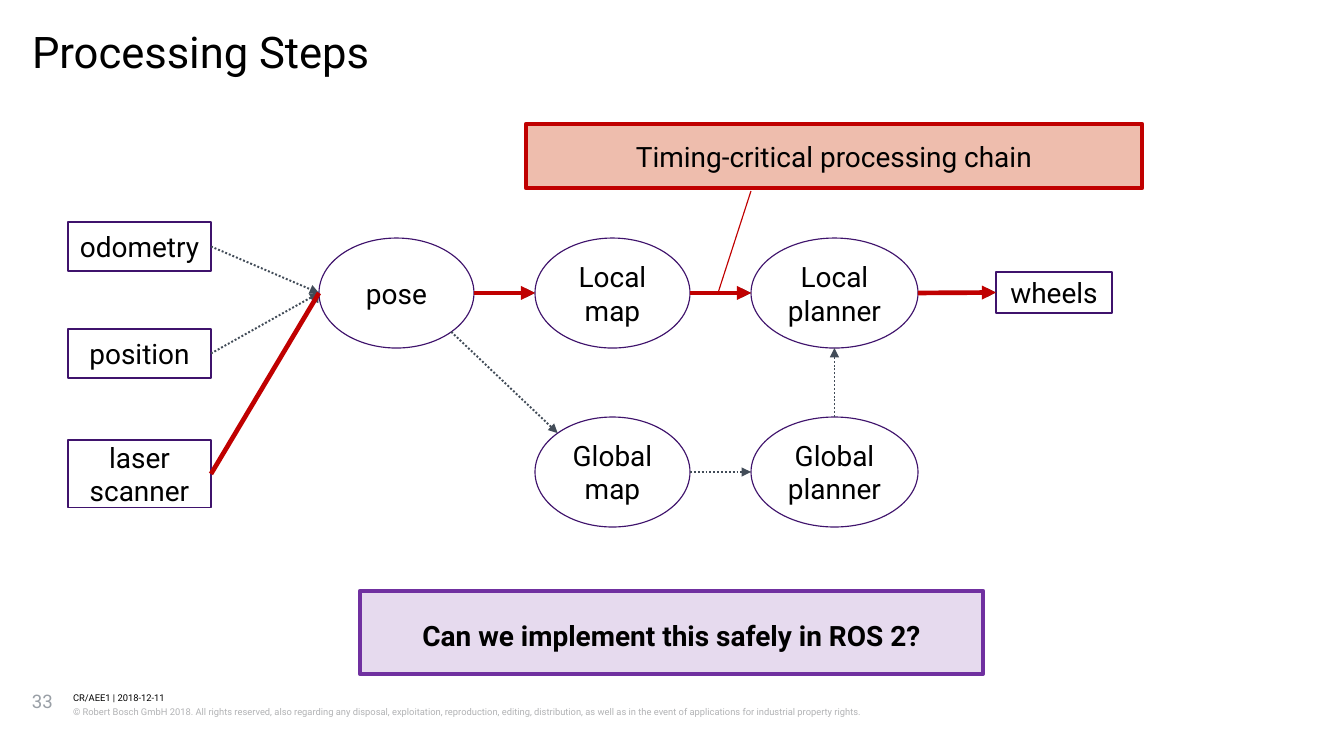
from math import sqrt

from lxml.etree import SubElement
from pptx import Presentation
from pptx.dml.color import RGBColor
from pptx.enum.dml import MSO_LINE
from pptx.enum.shapes import MSO_CONNECTOR, MSO_SHAPE
from pptx.enum.text import MSO_ANCHOR, MSO_AUTO_SIZE, PP_ALIGN
from pptx.oxml.ns import qn
from pptx.util import Emu, Pt

FONT = "Roboto"
COLORS = {
    "text": "000000", "outline": "3F136C", "flow": "424C58", "critical": "C00000",
    "callout": "CC3300", "question": "E6DAEE", "question_line": "7030A0",
    "number": "999FA6", "legal": "B2B3B5",
}
DIAGONAL = sqrt(0.5) / 2
SIDES = {
    "left": (0, 0.5), "right": (1, 0.5), "top": (0.5, 0), "bottom": (0.5, 1),
    "upper left": (0.5 - DIAGONAL, 0.5 - DIAGONAL),
    "lower right": (0.5 + DIAGONAL, 0.5 + DIAGONAL),
}
# name: (text, shape, (left, top, width, height))
NODES = {
    "odometry": ("odometry", MSO_SHAPE.RECTANGLE, (0, 0, 143, 49)),
    "position": ("position", MSO_SHAPE.RECTANGLE, (0, 107, 143, 49)),
    "laser": ("laser\nscanner", MSO_SHAPE.RECTANGLE, (0, 218, 143, 68)),
    "pose": ("pose", MSO_SHAPE.OVAL, (251, 16, 155, 110)),
    "local map": ("Local\nmap", MSO_SHAPE.OVAL, (467, 16, 155, 110)),
    "local planner": ("Local\nplanner", MSO_SHAPE.OVAL, (683, 16, 167, 110)),
    "global map": ("Global\nmap", MSO_SHAPE.OVAL, (467, 195, 155, 110)),
    "global planner": ("Global\nplanner", MSO_SHAPE.OVAL, (683, 195, 167, 110)),
    "wheels": ("wheels", MSO_SHAPE.RECTANGLE, (928, 50, 116, 41)),
}
CRITICAL_FLOWS = [
    ("laser", "right", "pose", "left"),
    ("pose", "right", "local map", "left"),
    ("local map", "right", "local planner", "left"),
    ("local planner", "right", "wheels", "left"),
]
FLOWS = [
    ("odometry", "right", "pose", "left"),
    ("position", "right", "pose", "left"),
    ("pose", "lower right", "global map", "upper left"),
    ("global map", "right", "global planner", "left"),
    ("global planner", "top", "local planner", "bottom"),
] + CRITICAL_FLOWS


def px(length):
    return Emu(round(length * 914400 / 112))


def color(name):
    return RGBColor.from_string(COLORS[name])


def write(shape, text, size=18, ink="text", bold=False, align=PP_ALIGN.LEFT,
          anchor=MSO_ANCHOR.TOP, spacing=None):
    """Fill a shape with text, one paragraph for each line."""
    frame = shape.text_frame
    frame.word_wrap = True
    frame.auto_size = MSO_AUTO_SIZE.NONE
    frame.vertical_anchor = anchor
    frame.margin_left = frame.margin_right = frame.margin_top = frame.margin_bottom = 0
    frame.text = text
    for para in frame.paragraphs:
        para.alignment = align
        para.line_spacing = spacing
        para.font.name = FONT
        para.font.size = Pt(size)
        para.font.bold = bold
        para.font.color.rgb = color(ink)


def add_text(slide, text, box, **style):
    write(slide.shapes.add_textbox(*map(px, box)), text, **style)


def add_block(slide, text, box, kind=MSO_SHAPE.RECTANGLE, fill=None, line="outline",
              width=0.75, **style):
    shape = slide.shapes.add_shape(kind, *map(px, box))
    shape.shadow.inherit = False
    if fill:
        shape.fill.solid()
        shape.fill.fore_color.rgb = color(fill)
    else:
        shape.fill.background()
    shape.line.color.rgb = color(line)
    shape.line.width = Pt(width)
    write(shape, text, align=PP_ALIGN.CENTER, anchor=MSO_ANCHOR.MIDDLE, **style)
    return shape


def add_line(slide, start, end, ink="critical", width=3, dash=None, arrow=True):
    line = slide.shapes.add_connector(MSO_CONNECTOR.STRAIGHT, *map(px, start + end))
    line.line.color.rgb = color(ink)
    line.line.width = Pt(width)
    if dash:
        line.line.dash_style = dash
    if arrow:
        SubElement(line.line._get_or_add_ln(), qn("a:tailEnd"), type="triangle")
    SubElement(line._element.spPr, qn("a:effectLst"))


def add_title(slide, text, box):
    title = slide.shapes.title
    title.left, title.top, title.width, title.height = map(px, box)
    write(title, text, size=28, spacing=0.89)


def add_diagram(slide, box):
    left, top = box[:2]

    def point(name, side):
        x, y, width, height = NODES[name][2]
        across, down = SIDES[side]
        return left + x + across * width, top + y + down * height

    for text, kind, (x, y, width, height) in NODES.values():
        add_block(slide, text, (left + x, top + y, width, height), kind)
    for source, source_side, target, target_side in FLOWS:
        add_line(slide, point(source, source_side), point(target, target_side),
                 ink="flow", width=1.25, dash=MSO_LINE.ROUND_DOT)
    for source, source_side, target, target_side in CRITICAL_FLOWS:
        add_line(slide, point(source, source_side), point(target, target_side),
                 arrow=source != "laser")


def add_callout(slide, text, box):
    """Add a translucent banner with a leader down to the critical chain."""
    left, top, _, height = box
    banner = add_block(slide, text, box, fill="callout", line="critical", width=3)
    tint = banner._element.spPr.find(qn("a:solidFill"))[0]
    SubElement(tint, qn("a:alpha"), val="32000")
    add_line(slide, (left + 192, top + 169), (left + 225, top + height + 3),
             width=0.75, arrow=False)


def add_question(slide, text, box):
    block = add_block(slide, text, box, fill="question", line="question_line", width=2.75,
                      bold=True, spacing=Pt(23))
    block.text_frame.margin_top = px(4)


def add_footer(slide, box):
    left, top, width, _ = box
    add_text(slide, "33", (left, top, 36, 50), size=12, ink="number")
    add_text(slide, "CR/AEE1 | 2018-12-11", (left + 41, top + 1, width - 41, 13),
             size=6, spacing=1.07)
    add_text(slide, "© Robert Bosch GmbH 2018. All rights reserved, also regarding any "
             "disposal, exploitation, reproduction, editing, distribution, as well as in "
             "the event of applications for industrial property rights.",
             (left + 41, top + 14, width - 41, 27), size=6, ink="legal", spacing=1.2)


def main():
    deck = Presentation()
    deck.slide_width, deck.slide_height = px(1344), px(756)
    slide = deck.slides.add_slide(deck.slide_layouts[5])
    add_title(slide, "Processing Steps", (32, 31, 1280, 48))
    add_diagram(slide, (68, 222, 1044, 305))
    add_callout(slide, "Timing-critical processing chain", (526, 124, 616, 64))
    add_question(slide, "Can we implement this safely in ROS 2?", (360, 591, 623, 83))
    add_footer(slide, (32, 690, 1162, 50))
    deck.save("out.pptx")


if __name__ == "__main__":
    main()
